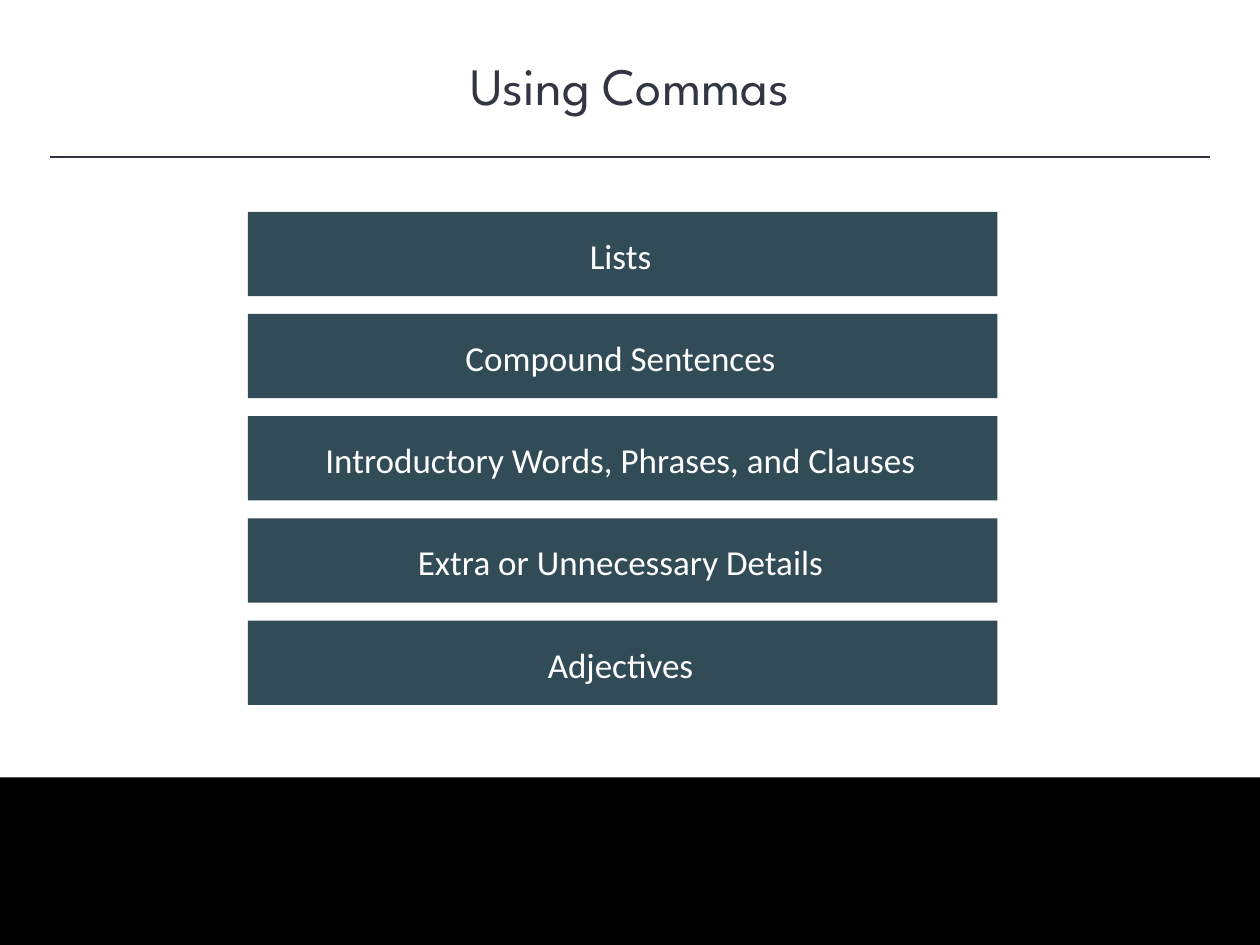
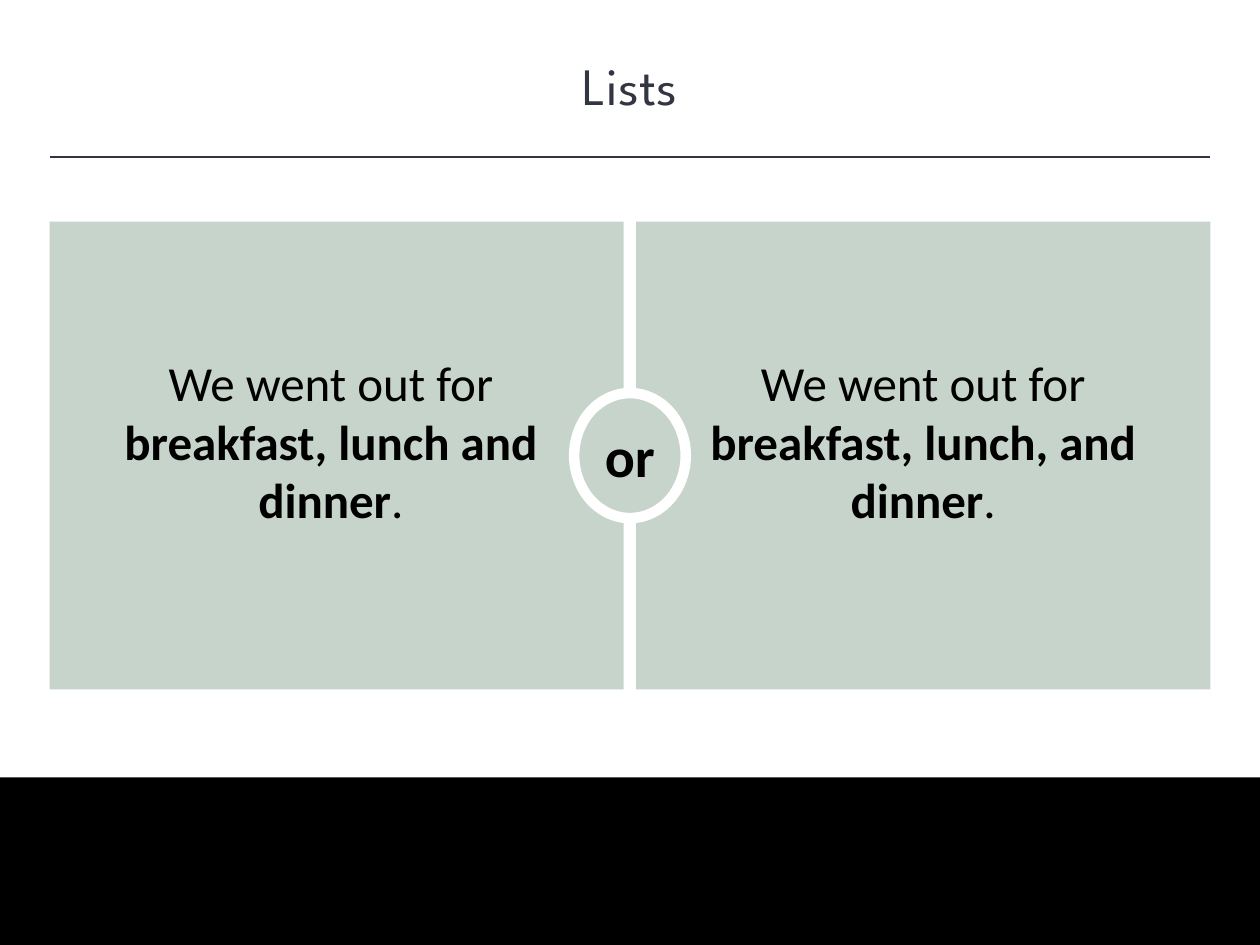
from collections import namedtuple

from lxml import etree
from pptx import Presentation
from pptx import util as u
from pptx.dml.color import RGBColor
from pptx.enum import shapes, text
from pptx.oxml import ns

INK = RGBColor(0x32, 0x35, 0x42)
TEAL = RGBColor(0x31, 0x4C, 0x57)
SAGE = RGBColor(0xC7, 0xD4, 0xCB)
BLACK = RGBColor(0, 0, 0)
WHITE = RGBColor(255, 255, 255)

Box = namedtuple("Box", "left top width height")
PAGE = Box(0, 0, 25.4, 19.05)
HEADING = Box(0, 0.94, PAGE.width, 1.55)
BAND = Box(0, 15.67, PAGE.width, 3.38)
TOPICS = Box(5, 4.27, 15.11, 9.94)
COMPARISON = Box(1, 4.47, 23.4, 9.43)
MARGIN = 1
RULE_TOP = 3.16

TITLE_FONT = {"name": "League Spartan", "size": u.Pt(30), "bold": False}
TOPIC_FONT = {"name": "Calibri", "size": u.Pt(20)}
SENTENCE_FONT = {"name": "Calibri", "size": u.Pt(28)}
OR_FONT = {"name": "Calibri", "size": u.Pt(32), "bold": True}
TOP = {"word_wrap": True, "vertical_anchor": text.MSO_ANCHOR.TOP}
MIDDLE = {"word_wrap": True, "vertical_anchor": text.MSO_ANCHOR.MIDDLE}


def cm(box):
    return [u.Cm(length) for length in box]


def apply(target, formats):
    for name, value in formats.items():
        setattr(target, name, value)


def write(shape, runs, font, color, frame):
    apply(shape.text_frame, frame)
    paragraph = shape.text_frame.paragraphs[0]
    paragraph.alignment = text.PP_ALIGN.CENTER
    for wording, emphasis in runs:
        run = paragraph.add_run()
        run.text = wording
        apply(run.font, {**font, **emphasis})
        run.font.color.rgb = color


def add_filled(slide, box, fill, preset=shapes.MSO_SHAPE.RECTANGLE):
    shape = slide.shapes.add_shape(preset, *cm(box))
    shape.shadow.inherit = False
    shape.fill.solid()
    shape.fill.fore_color.rgb = fill
    shape.line.fill.background()
    return shape


def add_rule(slide, box):
    rule = slide.shapes.add_connector(
        shapes.MSO_CONNECTOR.STRAIGHT,
        *cm((box.left + MARGIN, RULE_TOP, box.left + box.width - MARGIN, RULE_TOP)))
    rule.line.color.rgb = INK
    rule.line.width = u.Pt(1)
    etree.SubElement(rule._element.spPr, ns.qn("a:effectLst"))


def start_slide(deck, heading):
    slide = deck.slides.add_slide(deck.slide_layouts[5])
    slide.background.fill.solid()
    slide.background.fill.fore_color.rgb = WHITE
    title = slide.shapes.title
    apply(title, dict(zip(HEADING._fields, cm(HEADING))))
    write(title, [(heading, {})], TITLE_FONT, INK, TOP)
    add_rule(slide, PAGE)
    add_filled(slide, BAND, BLACK)
    return slide


def add_topics(slide, box, topics):
    bar_height = 1.7
    pitch = (box.height - bar_height) / (len(topics) - 1)
    for position, topic in enumerate(topics):
        bar = Box(box.left, box.top + position * pitch, box.width, bar_height)
        add_filled(slide, bar, TEAL)
        label = add_filled(
            slide, Box(bar.left + 0.18, bar.top + 0.33, bar.width - 0.45, 1.12), TEAL)
        write(label, [(topic, {})], TOPIC_FONT, WHITE, TOP)


def add_comparison(slide, box, sentences):
    gap = 0.25
    panel_width = (box.width - gap) / 2
    for position in range(2):
        left = box.left + position * (panel_width + gap)
        add_filled(slide, Box(left, box.top, panel_width, box.height), SAGE)

    width, height = 2.25, 2.52
    center = box.left + box.width / 2
    middle = box.top + box.height / 2
    badge = add_filled(
        slide, Box(center - width / 2, middle - height / 2, width, height),
        SAGE, shapes.MSO_SHAPE.OVAL)
    badge.line.color.rgb = WHITE
    badge.line.width = u.Pt(6)
    write(badge, [("or", {})], OR_FONT, BLACK, {**MIDDLE, "word_wrap": False})

    for position, (opening, listing, ending) in enumerate(sentences):
        sentence = slide.shapes.add_textbox(
            *cm((box.left + 1.06 + position * 11.94, box.top + 2.49, 9.22, 3.84)))
        runs = [(opening, {}), (listing, {"bold": True}), (ending, {"bold": False})]
        write(sentence, runs, SENTENCE_FONT, BLACK, MIDDLE)


def main():
    deck = Presentation()
    deck.slide_width, deck.slide_height = u.Cm(PAGE.width), u.Cm(PAGE.height)
    add_topics(start_slide(deck, "Using Commas"), TOPICS, [
        "Lists",
        "Compound Sentences",
        "Introductory Words, Phrases, and Clauses",
        "Extra or Unnecessary Details",
        "Adjectives",
    ])
    add_comparison(start_slide(deck, "Lists"), COMPARISON, [
        ("We went out for ", "breakfast, lunch and dinner", "."),
        ("We went out for ", "breakfast, lunch, and dinner", "."),
    ])
    deck.save("out.pptx")


if __name__ == "__main__":
    main()
